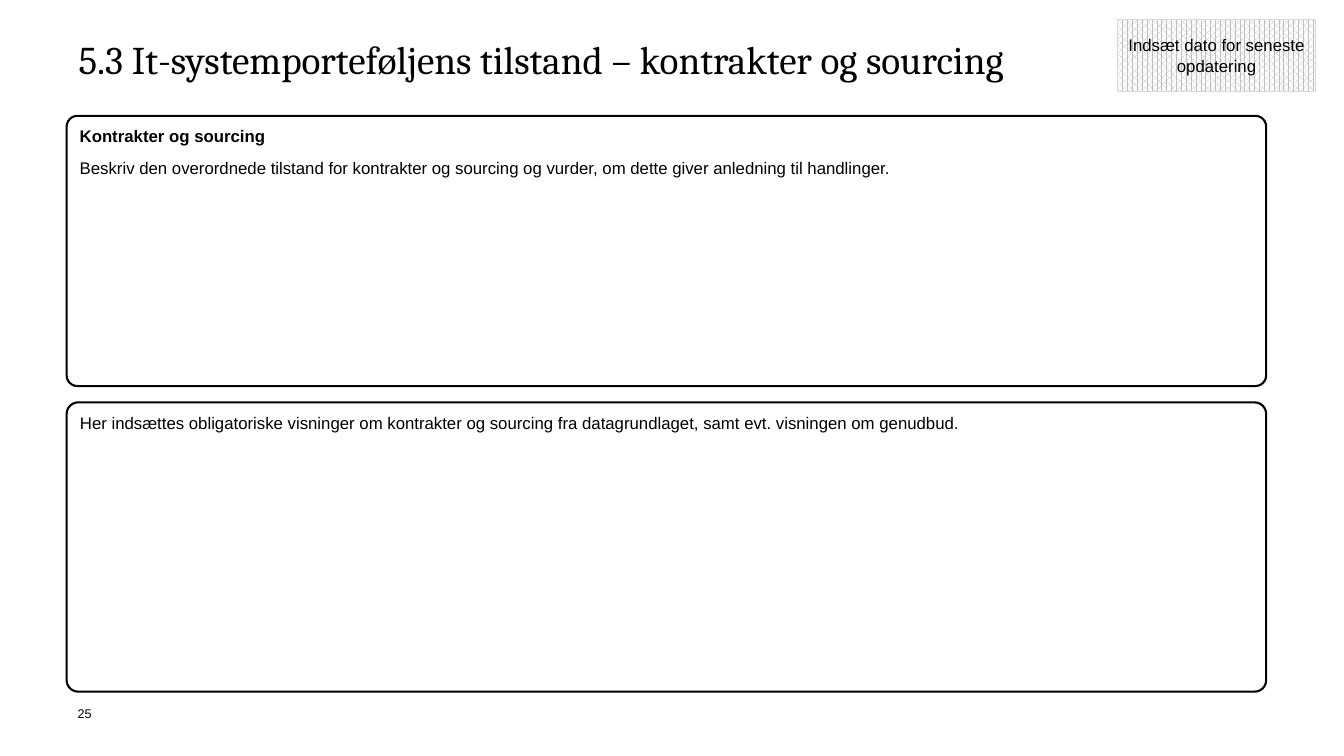
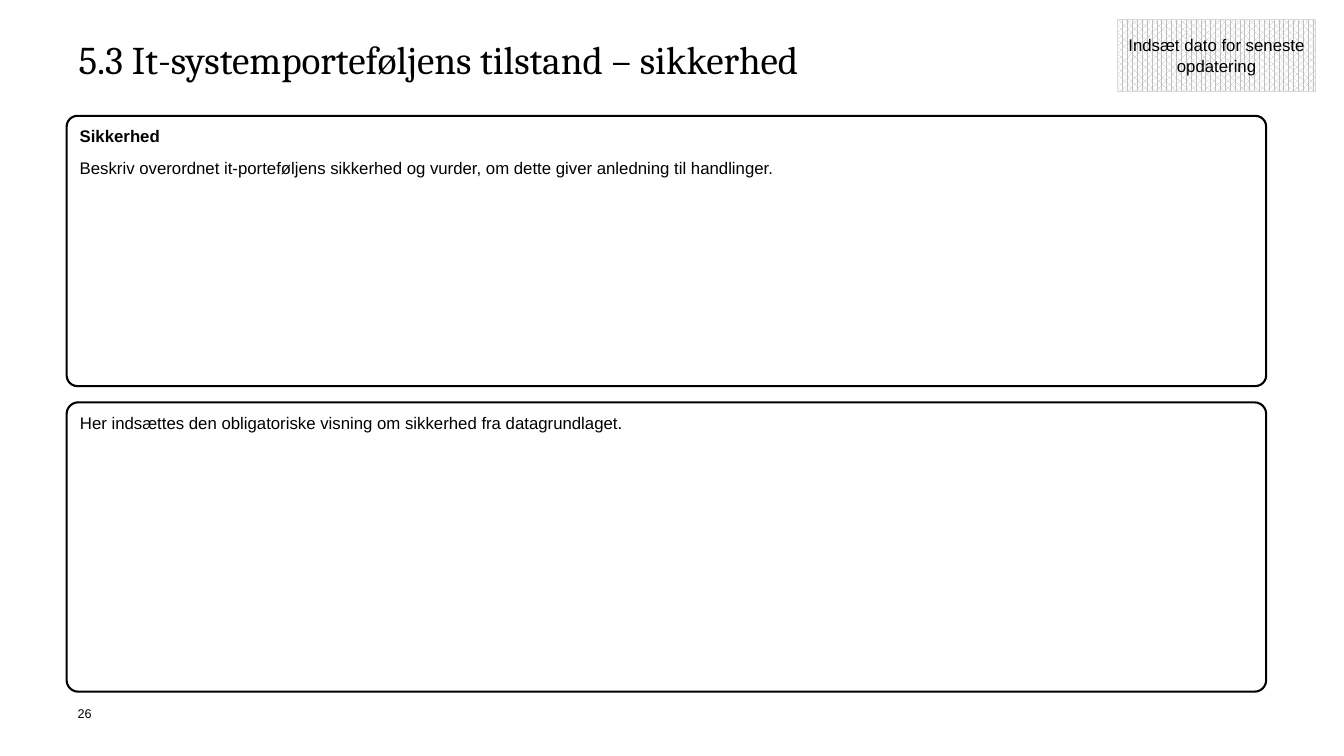
from pptx import Presentation
from pptx.dml.color import RGBColor
from pptx.enum.dml import MSO_PATTERN
from pptx.enum.shapes import MSO_SHAPE
from pptx.enum.text import MSO_ANCHOR, PP_ALIGN
from pptx.util import Cm, Pt

BLACK = RGBColor(0x00, 0x00, 0x00)
WHITE = RGBColor(0xFF, 0xFF, 0xFF)
PATTERN_GREY = RGBColor(0xBF, 0xBF, 0xBF)
BORDER_GREY = RGBColor(0xD9, 0xD9, 0xD9)
RECTANGLE = MSO_SHAPE.RECTANGLE
ROUNDED_RECTANGLE = MSO_SHAPE.ROUNDED_RECTANGLE
DOTTED = MSO_PATTERN.PERCENT_70
TOP = MSO_ANCHOR.TOP
MIDDLE = MSO_ANCHOR.MIDDLE
LEFT = PP_ALIGN.LEFT
CENTER = PP_ALIGN.CENTER

FIRST_PAGE = 25
PANEL_TOP = 2.92
PANEL_GAP = 0.41
DESCRIPTION_HEIGHT = 6.81
DATA_HEIGHT = 7.29

PAGES = [
    {
        "topic": "kontrakter og sourcing",
        "heading": "Kontrakter og sourcing",
        "description": "Beskriv den overordnede tilstand for kontrakter og sourcing og vurder, "
                       "om dette giver anledning til handlinger.",
        "data": "Her indsættes obligatoriske visninger om kontrakter og sourcing fra "
                "datagrundlaget, samt evt. visningen om genudbud.",
    },
    {
        "topic": "sikkerhed",
        "heading": "Sikkerhed",
        "description": "Beskriv overordnet it-porteføljens sikkerhed og vurder, "
                       "om dette giver anledning til handlinger.",
        "data": "Her indsættes den obligatoriske visning om sikkerhed fra datagrundlaget.",
    },
]


def write_text(frame, text, *, font="Arial", size=12, bold_first=False, align=LEFT,
               anchor=TOP, line_spacing=1.0, gap=0, inset=(0, 0)):
    frame.word_wrap = True
    frame.vertical_anchor = anchor
    frame.margin_left = frame.margin_right = Cm(inset[0])
    frame.margin_top = frame.margin_bottom = Cm(inset[1])
    for index, line in enumerate(text.split("\n")):
        paragraph = frame.add_paragraph() if index else frame.paragraphs[0]
        paragraph.text = line
        paragraph.alignment = align
        paragraph.line_spacing = line_spacing
        if index:
            paragraph.space_before = Pt(gap)
        paragraph.font.name = font
        paragraph.font.size = Pt(size)
        paragraph.font.bold = bold_first and index == 0
        paragraph.font.color.rgb = BLACK


class Deck:
    inset = (0.25, 0.13)

    def __init__(self):
        self.presentation = Presentation()
        self.presentation.slide_width = Cm(33.87)
        self.presentation.slide_height = Cm(19.05)
        self.slide = None

    def new_slide(self):
        self.slide = self.presentation.slides.add_slide(self.presentation.slide_layouts[6])

    def text(self, text, left, top, width, height, **style):
        box = self.slide.shapes.add_textbox(Cm(left), Cm(top), Cm(width), Cm(height))
        write_text(box.text_frame, text, **style)

    def shape(self, kind, left, top, width, height, line_color, line_width):
        shape = self.slide.shapes.add_shape(kind, Cm(left), Cm(top), Cm(width), Cm(height))
        shape.shadow.inherit = False
        shape.line.color.rgb = line_color
        shape.line.width = Pt(line_width)
        return shape

    def title(self, text):
        self.text(text, 1.98, 1.02, 29.97, 2.59, font="Cambria", size=28, line_spacing=0.9)

    def page_number(self, number):
        self.text(str(number), 1.96, 17.78, 0.79, 0.76, size=9)

    def panel(self, text, top, height, bold_first=False):
        panel = self.shape(ROUNDED_RECTANGLE, 1.68, top, 30.23, height, BLACK, 1.5)
        panel.adjustments[0] = 0.04
        panel.fill.background()
        write_text(panel.text_frame, text, bold_first=bold_first, line_spacing=1.08,
                   gap=7, inset=self.inset)

    def date_box(self, text):
        box = self.shape(RECTANGLE, 28.17, 0.48, 4.98, 1.83, BORDER_GREY, 0.5)
        box.fill.patterned()
        box.fill.pattern = DOTTED
        box.fill.fore_color.rgb = PATTERN_GREY
        box.fill.back_color.rgb = WHITE
        write_text(box.text_frame, text, align=CENTER, anchor=MIDDLE, inset=self.inset)


def main():
    deck = Deck()
    for number, page in enumerate(PAGES, start=FIRST_PAGE):
        deck.new_slide()
        deck.page_number(number)
        deck.title(f"5.3 It-systemporteføljens tilstand – {page['topic']}")
        deck.panel(f"{page['heading']}\n{page['description']}", PANEL_TOP,
                   DESCRIPTION_HEIGHT, bold_first=True)
        deck.panel(page["data"], PANEL_TOP + DESCRIPTION_HEIGHT + PANEL_GAP, DATA_HEIGHT)
        deck.date_box("Indsæt dato for seneste opdatering")
    deck.presentation.save("out.pptx")


if __name__ == "__main__":
    main()
